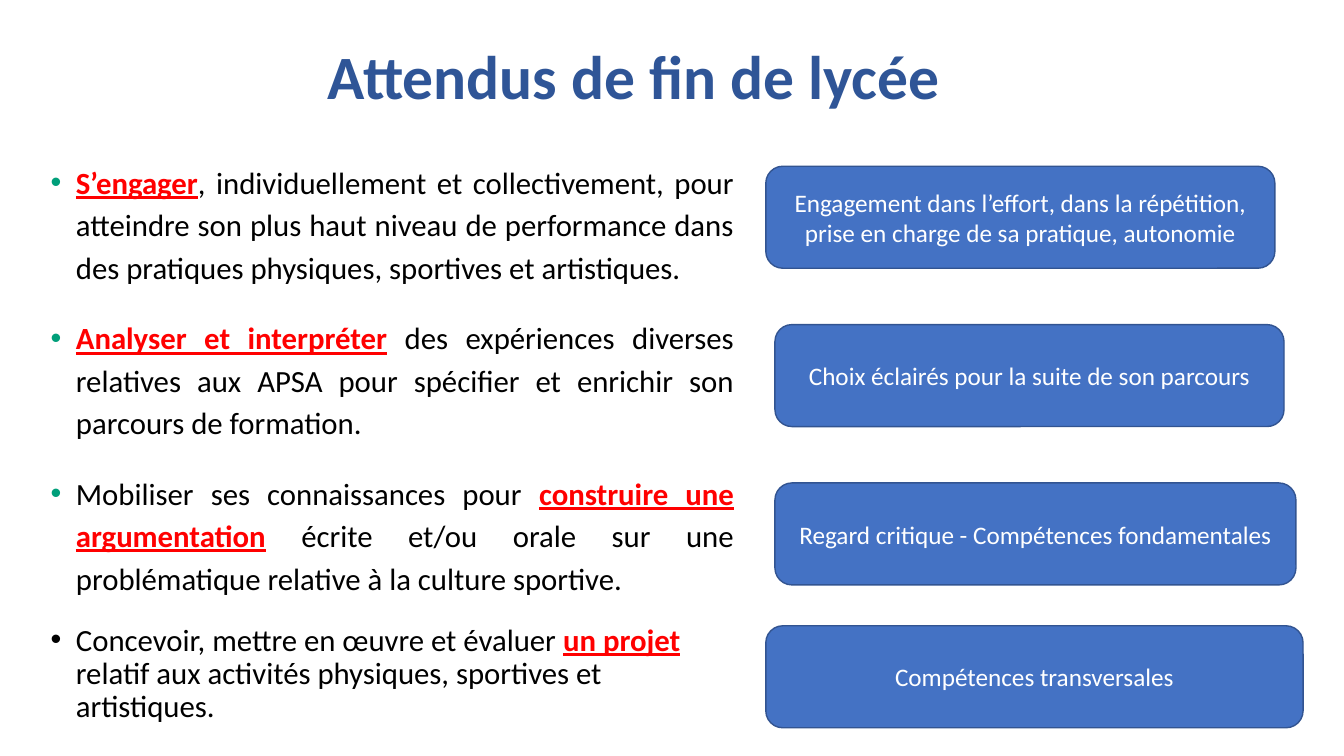
"""Build the slide on the goals expected at the end of lycée."""
from dataclasses import dataclass

from lxml.etree import SubElement as Sub
from pptx import Presentation
from pptx.dml.color import RGBColor as RGB
from pptx.enum.shapes import MSO_SHAPE as Shape
from pptx.enum.text import MSO_ANCHOR as Anchor, MSO_AUTO_SIZE as Auto, PP_ALIGN as Align
from pptx.oxml.ns import qn
from pptx.util import Cm, Pt

TITLE = "Attendus de fin de lycée"
GOALS = [
    ("", "S’engager", ", individuellement et collectivement, pour atteindre son plus haut "
     "niveau de performance dans des pratiques physiques, sportives et artistiques."),
    ("", "Analyser et interpréter", " des expériences diverses relatives aux APSA pour "
     "spécifier et enrichir son parcours de formation."),
    ("Mobiliser ses connaissances pour ", "construire une argumentation",
     " écrite et/ou orale sur une problématique relative à la culture sportive. "),
    ("Concevoir, mettre en œuvre et évaluer ", "un projet ",
     "relatif aux activités physiques, sportives et artistiques."),
]
SKILLS = [
    ("Engagement dans l’effort, dans la répétition, prise en charge de sa pratique, "
     "autonomie", 19.3, 4.19, 12.83),
    ("Choix éclairés pour la suite de son parcours", 19.53, 8.18, 12.83),
    ("Regard critique - Compétences fondamentales", 19.53, 12.17, 13.13),
    ("Compétences transversales", 19.3, 15.77, 13.54),
]
BOX_H = 2.57
INDENT = Cm(0.64)


@dataclass(frozen=True)
class Theme:
    """Hold the font, colours and type sizes."""
    font: str = "Calibri"
    title: str = "2F5597"
    key: str = "FF0000"
    text: str = "000000"
    dot: str = "009F7A"
    fill: str = "4472C4"
    line: str = "325491"
    white: str = "FFFFFF"
    big: int = 44
    mid: int = 22
    small: int = 18


THEME = Theme()


def place(shape, left, top, width, height):
    """Move and size a shape in centimetres."""
    shape.left, shape.top = Cm(left), Cm(top)
    shape.width, shape.height = Cm(width), Cm(height)


def style(font, size, color, bold=False):
    """Set the common font traits."""
    font.name, font.size, font.bold = THEME.font, Pt(size), bold
    font.color.rgb = RGB.from_string(color)


def bullet(para, color):
    """Give a paragraph a hanging coloured bullet."""
    props = para._p.get_or_add_pPr()
    props.set("marL", str(INDENT))
    props.set("indent", str(-INDENT))
    Sub(Sub(props, qn("a:buClr")), qn("a:srgbClr"), val=color)
    Sub(props, qn("a:buFont"), typeface="Arial")
    Sub(props, qn("a:buChar"), char="•")


def add_title(shape):
    """Fill the title placeholder."""
    place(shape, 1.02, 0.71, 29.92, 2.57)
    frame = shape.text_frame
    frame.text, frame.vertical_anchor = TITLE, Anchor.MIDDLE
    para = frame.paragraphs[0]
    para.alignment, para.line_spacing = Align.CENTER, 0.9
    style(para.font, THEME.big, THEME.title, True)


def add_goals(shape):
    """Fill the body placeholder with the goals."""
    place(shape, 1.02, 3.86, 17.73, 5.16)
    frame = shape.text_frame
    frame.auto_size = Auto.NONE
    for i, parts in enumerate(GOALS):
        para = frame.add_paragraph() if i else frame.paragraphs[0]
        last = i == len(GOALS) - 1
        para.alignment = Align.LEFT if last else Align.JUSTIFY
        para.line_spacing = 0.9 if last else 1.15
        para.space_before, para.space_after = Pt(10), Pt(0 if last else 10)
        bullet(para, THEME.text if last else THEME.dot)
        style(para.font, THEME.mid, THEME.text)
        for j, part in enumerate(parts):
            if part:
                run = para.add_run()
                run.text = part
                if j == 1:
                    run.font.bold = run.font.underline = True
                    run.font.color.rgb = RGB.from_string(THEME.key)


def add_skill(slide, text, left, top, width):
    """Draw one rounded skill box."""
    box = slide.shapes.add_shape(
        Shape.ROUNDED_RECTANGLE, Cm(left), Cm(top), Cm(width), Cm(BOX_H))
    box.shadow.inherit = False
    box.fill.solid()
    box.fill.fore_color.rgb = RGB.from_string(THEME.fill)
    box.line.color.rgb = RGB.from_string(THEME.line)
    box.line.width = Pt(1)
    frame = box.text_frame
    frame.text, frame.word_wrap = text, True
    frame.vertical_anchor = Anchor.MIDDLE
    para = frame.paragraphs[0]
    para.alignment = Align.CENTER
    style(para.font, THEME.small, THEME.white)


def main():
    """Build and save the slide."""
    deck = Presentation()
    deck.slide_width, deck.slide_height = Cm(33.87), Cm(19.05)
    slide = deck.slides.add_slide(deck.slide_layouts[1])
    add_title(slide.shapes.title)
    add_goals(slide.placeholders[1])
    for skill in SKILLS:
        add_skill(slide, *skill)
    deck.save("out.pptx")


if __name__ == "__main__":
    main()
